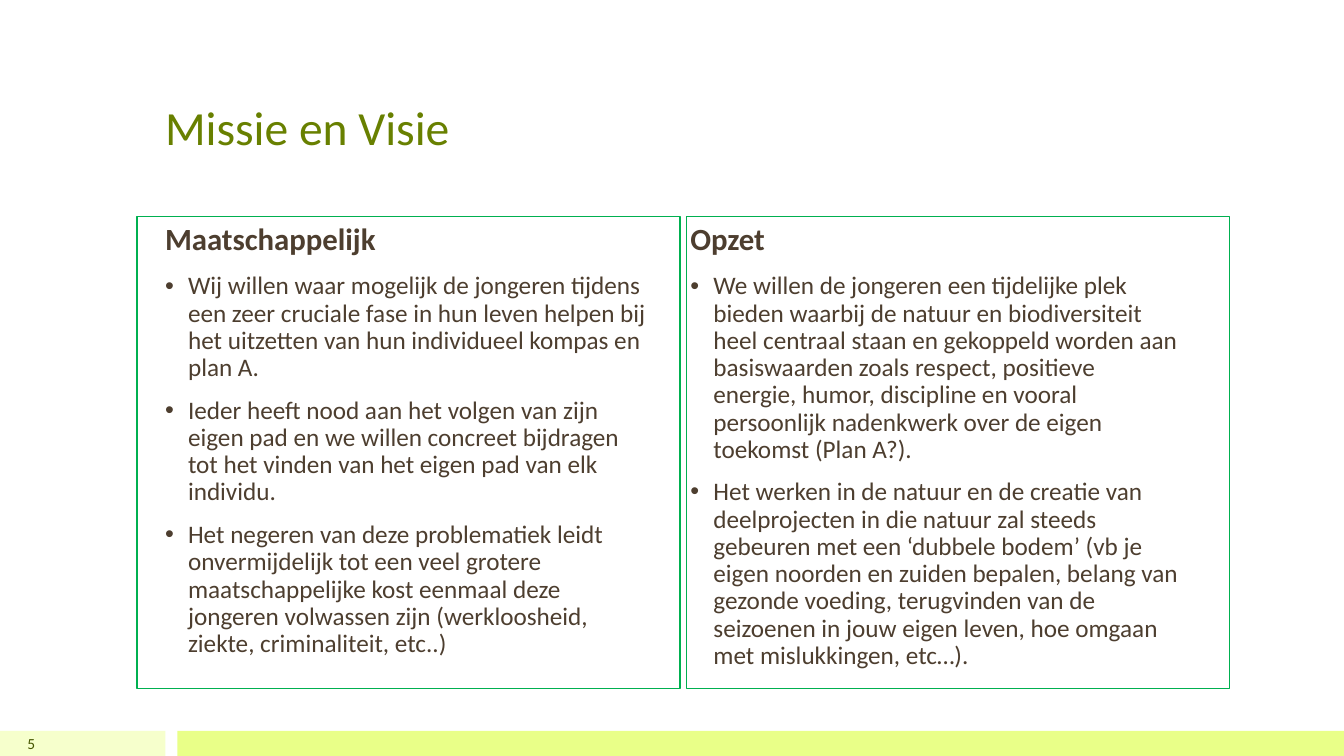
from pptx import Presentation
from pptx.dml.color import RGBColor
from pptx.enum import shapes, text
from pptx.oxml import parse_xml
from pptx.oxml.ns import nsdecls
from pptx.util import Cm, Pt

OLIVE = RGBColor(0x68, 0x80, 0x00)
BROWN = RGBColor(0x4D, 0x3E, 0x2F)
MOSS = RGBColor(0x45, 0x55, 0x00)
GREEN = RGBColor(0x00, 0xB0, 0x50)
PALE = RGBColor(0xF6, 0xFF, 0xCC)
LIME = RGBColor(0xE9, 0xFF, 0x88)

COLUMNS = [
    (3.91, 3.45, "Maatschappelijk", [
        "Wij willen waar mogelijk de jongeren tijdens een zeer cruciale fase in hun leven helpen bij het uitzetten van hun individueel kompas en plan A.",
        "Ieder heeft nood aan het volgen van zijn eigen pad en we willen concreet bijdragen tot het vinden van het eigen pad van elk individu.",
        "Het negeren van deze problematiek leidt onvermijdelijk tot een veel grotere maatschappelijke kost eenmaal deze jongeren volwassen zijn (werkloosheid, ziekte, criminaliteit, etc..)",
    ]),
    (17.15, 17.3, "Opzet", [
        "We willen de jongeren een tijdelijke plek bieden waarbij de natuur en biodiversiteit heel centraal staan en gekoppeld worden aan basiswaarden zoals respect, positieve energie, humor, discipline en vooral persoonlijk nadenkwerk over de eigen toekomst (Plan A?).",
        "Het werken in de natuur en de creatie van deelprojecten in die natuur zal steeds gebeuren met een ‘dubbele bodem’ (vb je eigen noorden en zuiden bepalen, belang van gezonde voeding, terugvinden van de seizoenen in jouw eigen leven, hoe omgaan met mislukkingen, etc…).",
    ]),
]

deck = Presentation()
deck.slide_width, deck.slide_height = Cm(33.87), Cm(19.05)
slide = deck.slides.add_slide(deck.slide_layouts[6])


def add_rect(left, top, width, height, fill=None, line=None):
    rect = slide.shapes.add_shape(shapes.MSO_SHAPE.RECTANGLE,
                                  Cm(left), Cm(top), Cm(width), Cm(height))
    rect.shadow.inherit = False
    if fill:
        rect.fill.solid()
        rect.fill.fore_color.rgb = fill
    else:
        rect.fill.background()
    if line:
        rect.line.color.rgb = line
        rect.line.width = Pt(1)
    else:
        rect.line.fill.background()


def add_text(left, top, width, height, lines, size, color, anchor):
    box = slide.shapes.add_textbox(Cm(left), Cm(top), Cm(width), Cm(height))
    frame = box.text_frame
    frame.word_wrap = True
    frame.vertical_anchor = anchor
    frame.text = "\n".join(lines)
    for par in frame.paragraphs:
        par.font.name = "Calibri"
        par.font.size = Pt(size)
        par.font.color.rgb = color
    return frame.paragraphs


# Footer bars and page number
add_rect(0, 18.42, 4.17, 0.63, fill=PALE)
add_rect(4.47, 18.42, 29.4, 0.63, fill=LIME)
page = add_text(0, 18.42, 1.14, 0.63, ["5"], 11, MOSS, text.MSO_ANCHOR.MIDDLE)
page[0].alignment = text.PP_ALIGN.RIGHT

# Title
add_text(3.91, 0.76, 26.04, 3.28, ["Missie en Visie"], 34, OLIVE,
         text.MSO_ANCHOR.BOTTOM)

# Framed columns: heading above bullets
for left, edge, head, points in COLUMNS:
    title = add_text(left, 4.32, 12.8, 2.29, [head], 22, BROWN,
                     text.MSO_ANCHOR.BOTTOM)
    title[0].font.bold = True
    title[0].line_spacing = 0.9
    for par in add_text(left, 6.76, 12.8, 10.59, points, 18, BROWN,
                        text.MSO_ANCHOR.TOP):
        par.line_spacing = 0.9
        par.space_before = Pt(11)
        props = par._p.get_or_add_pPr()
        props.set("marL", str(Cm(0.58)))
        props.set("indent", str(-Cm(0.58)))
        # Bullet settings come before the default run properties
        for tag in ('<a:buFont %s typeface="Arial"/>', '<a:buChar %s char="•"/>'):
            props.insert(len(props) - 1, parse_xml(tag % nsdecls("a")))
    add_rect(edge, 5.46, 13.69, 11.89, line=GREEN)

deck.save("out.pptx")
